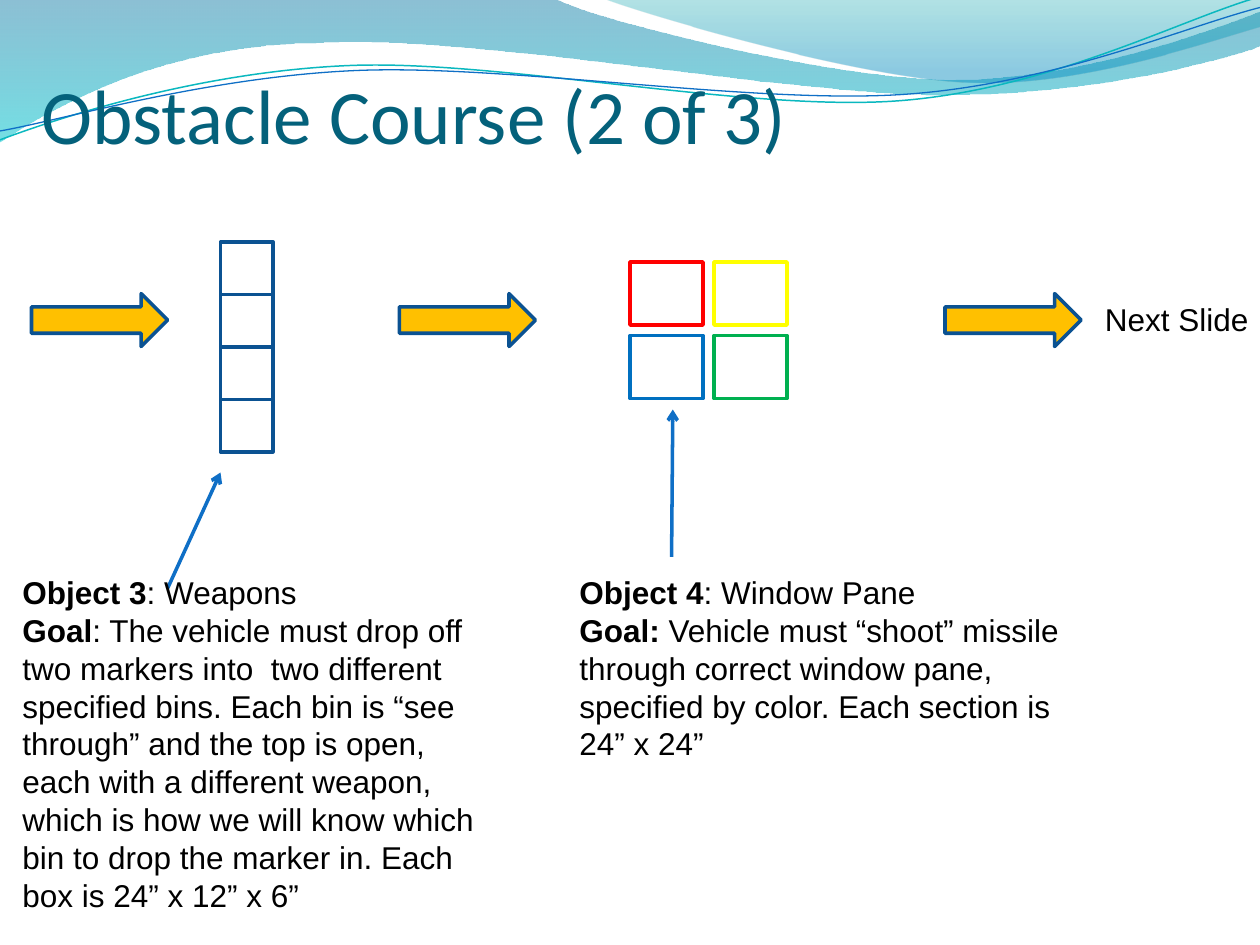
import math
from lxml import etree
from pptx import Presentation
from pptx import util as u
from pptx.dml.color import RGBColor
from pptx.enum import shapes, text
from pptx.oxml import ns

COLORS = {
    "title": "04617B", "body": "000000", "paper": "FFFFFF",
    "arrow": "FFC000", "outline": "0B5292", "pointer": "0F6FC6",
    "teal_wave": "0AB8BF",
    "red": "FF0000", "yellow": "FFFF00", "blue": "0070C0", "green": "00B050",
    "sea": "0074A1", "aqua": "00C6CF", "lagoon": "00A1A9", "sky": "008BBF",
}

TITLE = "Obstacle Course (2 of 3)"
NOTES = [
    ((0.08, 4.5, 4, 2.83), [
        ("Object 3", ": Weapons"),
        ("Goal", ": The vehicle must drop off two markers into  two different specified "
                 "bins. Each bin is “see through” and the top is open, each with a different "
                 "weapon, which is how we will know which bin to drop the marker in. Each "
                 "box is 24” x 12” x 6”"),
    ]),
    ((4.5, 4.5, 4.33, 1.62), [
        ("Object 4", ": Window Pane"),
        ("Goal:", " Vehicle must “shoot” missile through correct window pane, specified by "
                  "color. Each section is 24” x 24”"),
    ]),
    ((8.67, 2.33, 1.42, 0.42), [("", "Next Slide")]),
]
ROUTE_ARROWS = [0.25, 3.17, 7.5]
BIN_COUNT, BIN_SIZE = 4, 5 / 12
PANES = [["red", "yellow"], ["blue", "green"]]
PANE_PITCH = (8 / 12, 7 / 12)
POINTERS = [((1.33, 4.67), (1.75, 3.75)), ((5.33, 4.42), (5.34, 3.25))]

RIBBONS = [
    ([(0, -0.01), (4.4, -0.01),
      (4.76, 0.17, 6.64, 0.63, 7.58, 0.63), (8.53, 0.63, 9.58, 0.26, 10, 0.09),
      (10.01, 0.36),
      (9.83, 0.44, 8.7, 0.76, 7.46, 0.75), (6.22, 0.75, 3.82, 0.28, 2.57, 0.34),
      (1.29, 0.35, 0.46, 0.83, -0.01, 1.13)],
     [("sea", 0, 45), ("aqua", 1, 55)]),
    ([(4.79, -0.01),
      (5.09, 0.11, 6.82, 0.62, 7.69, 0.65), (8.56, 0.69, 9.61, 0.32, 10, 0.21),
      (10, 0)],
     [("lagoon", 0, 30), ("sky", 0.8, 45)]),
]
WAVE_TILT = -2.7
WAVES = [
    ([(0, 1.11), (0.48, 0.93, 1.58, 0.57, 2.77, 0.52),
      (3.95, 0.47, 5.93, 0.89, 7.13, 0.8), (8.33, 0.71, 9.38, 0.15, 9.98, -0.02)],
     (4.99, 0.58), "teal_wave", 0.85),
    ([(0, 1.04), (0.47, 0.96, 1.64, 0.61, 2.83, 0.56),
      (4.03, 0.51, 5.97, 0.83, 7.17, 0.75), (8.36, 0.67, 9.41, 0.21, 10, 0.06)],
     (5, 0.59), "pointer", 0.75),
]


def rgb(name):
    return RGBColor.from_string(COLORS[name])


def level(segments, center):
    angle = math.radians(-WAVE_TILT)
    leveled = []
    for segment in segments:
        turned = []
        for x, y in zip(segment[::2], segment[1::2]):
            dx, dy = x - center[0], y - center[1]
            turned += [center[0] + dx * math.cos(angle) - dy * math.sin(angle),
                       center[1] + dx * math.sin(angle) + dy * math.cos(angle)]
        leveled.append(turned)
    return leveled


def add_outline(slide, segments, close):
    points = [(u.Inches(x), u.Inches(y)) for segment in segments
              for x, y in zip(segment[::2], segment[1::2])]
    builder = slide.shapes.build_freeform(*points[0])
    builder.add_line_segments(points[1:], close=close)
    outline = builder.convert_to_shape()
    outline.shadow.inherit = False
    steps = iter(list(outline._element.iter(ns.qn("a:lnTo"))))
    for segment in segments[1:]:
        step = next(steps)
        if len(segment) == 6:
            curve = etree.Element(ns.qn("a:cubicBezTo"))
            step.addprevious(curve)
            for control in (step, next(steps), next(steps)):
                curve.append(control[0])
                control.getparent().remove(control)
    return outline


def add_ribbon(slide, segments, stops):
    ribbon = add_outline(slide, segments, True)
    ribbon.line.fill.background()
    ribbon.fill.gradient()
    ribbon.fill.gradient_angle = 270
    for stop, (color, position, opacity) in zip(ribbon.fill.gradient_stops, stops):
        stop.color.rgb = rgb(color)
        stop.position = position
    tints = ribbon._element.spPr.iter(ns.qn("a:srgbClr"))
    for tint, (color, position, opacity) in zip(tints, stops):
        etree.SubElement(tint, ns.qn("a:alpha"), val=str(opacity * 1000))


def add_wave(slide, segments, center, color, width):
    wave = add_outline(slide, level(segments, center), False)
    wave.rotation = WAVE_TILT
    wave.fill.background()
    wave.line.color.rgb = rgb(color)
    wave.line.width = u.Pt(width)


def add_block(slide, kind, box, fill, line):
    block = slide.shapes.add_shape(kind, *map(u.Inches, box))
    block.shadow.inherit = False
    block.fill.solid()
    block.fill.fore_color.rgb = rgb(fill)
    block.line.color.rgb = rgb(line)
    block.line.width = u.Pt(2)


def add_pointer(slide, start, end):
    pointer = slide.shapes.add_connector(shapes.MSO_CONNECTOR.STRAIGHT,
                                         *map(u.Inches, start + end))
    pointer.line.color.rgb = rgb("pointer")
    pointer.line.width = u.Pt(2)
    properties = pointer._element.spPr
    etree.SubElement(properties.find(ns.qn("a:ln")), ns.qn("a:tailEnd"), type="arrow")
    etree.SubElement(properties, ns.qn("a:effectLst"))


def style(paragraph, font, size, color):
    paragraph.font.name = font
    paragraph.font.size = u.Pt(size)
    paragraph.font.color.rgb = rgb(color)


def add_title(slide):
    frame = slide.shapes.add_textbox(*map(u.Inches, (0.33, 0.5, 9, 0.77))).text_frame
    frame.word_wrap = True
    frame.vertical_anchor = text.MSO_ANCHOR.BOTTOM
    frame.margin_left = frame.margin_right = frame.margin_bottom = 0
    frame.text = TITLE
    style(frame.paragraphs[0], "Calibri", 44, "title")


def add_note(slide, box, lines):
    frame = slide.shapes.add_textbox(*map(u.Inches, box)).text_frame
    frame.word_wrap = True
    frame.auto_size = text.MSO_AUTO_SIZE.SHAPE_TO_FIT_TEXT
    for index, (label, wording) in enumerate(lines):
        paragraph = frame.paragraphs[0] if index == 0 else frame.add_paragraph()
        style(paragraph, "Arial", 18, "body")
        if label:
            run = paragraph.add_run()
            run.text = label
            run.font.bold = True
        paragraph.add_run().text = wording


def main():
    deck = Presentation()
    deck.slide_width, deck.slide_height = u.Inches(10), u.Inches(7.5)
    slide = deck.slides.add_slide(deck.slide_layouts[6])
    for ribbon in RIBBONS:
        add_ribbon(slide, *ribbon)
    for wave in WAVES:
        add_wave(slide, *wave)
    add_title(slide)
    for left in ROUTE_ARROWS:
        add_block(slide, shapes.MSO_SHAPE.RIGHT_ARROW, (left, 2.33, 1.08, 0.42),
                  "arrow", "outline")
    for index in range(BIN_COUNT):
        add_block(slide, shapes.MSO_SHAPE.RECTANGLE,
                  (1.75, 1.92 + index * BIN_SIZE, BIN_SIZE, BIN_SIZE), "paper", "outline")
    for row, pane_colors in enumerate(PANES):
        for column, color in enumerate(pane_colors):
            add_block(slide, shapes.MSO_SHAPE.RECTANGLE,
                      (5 + column * PANE_PITCH[0], 2.08 + row * PANE_PITCH[1], 0.58, 0.5),
                      "paper", color)
    for pointer in POINTERS:
        add_pointer(slide, *pointer)
    for note in NOTES:
        add_note(slide, *note)
    deck.save("out.pptx")


if __name__ == "__main__":
    main()
